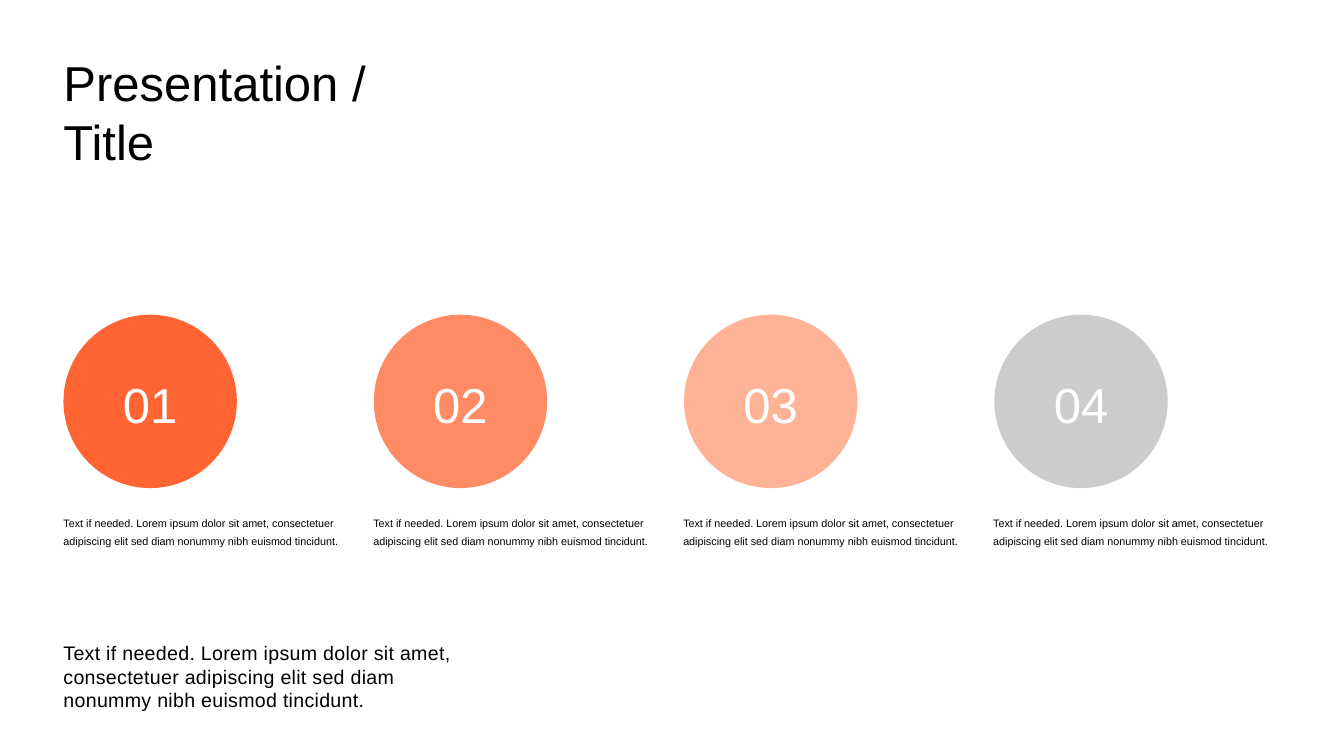
from dataclasses import dataclass

from pptx import Presentation
from pptx import util as u
from pptx.dml.color import RGBColor
from pptx.enum import shapes, text

FONT = "Arial"
BLACK, WHITE = "000000", "FFFFFF"
BODY = ("Text if needed. Lorem ipsum dolor sit amet, consectetuer "
        "adipiscing elit sed diam nonummy nibh euismod tincidunt.")


@dataclass
class TextStyle:
    size: float
    leading: float
    color: str = BLACK
    align: text.PP_ALIGN = text.PP_ALIGN.LEFT
    tracking: int = 0  # hundredths of a point


@dataclass
class Step:
    number: str
    fill: str
    caption: str = BODY


HEADING = TextStyle(35, 42)
SUMMARY = TextStyle(14, 16.8, tracking=20)
CAPTION = TextStyle(7.7, 13.2)
NUMBER = TextStyle(35, 42, WHITE, text.PP_ALIGN.CENTER)

STEPS = [
    Step("01", "FF6432"),
    Step("02", "FF8B65"),
    Step("03", "FFB396"),
    Step("04", "CCCCCC"),
]

# Column layout in centimetres
CIRCLE_LEFT, CIRCLE_TOP, CIRCLE_SIZE, CIRCLE_PITCH = 1.6, 7.93, 4.37, 7.82
TEXT_LEFT, CAPTION_TOP, CAPTION_PITCH = 1.35, 12.75, 7.81


def rgb(color: str) -> RGBColor:
    return RGBColor.from_string(color)


def write(frame, words: str, style: TextStyle) -> None:
    frame.word_wrap = True
    frame.text = words
    for paragraph in frame.paragraphs:
        paragraph.alignment = style.align
        paragraph.line_spacing = u.Pt(style.leading)
        for run in paragraph.runs:
            run.font.name = FONT
            run.font.size = u.Pt(style.size)
            run.font.color.rgb = rgb(style.color)
            if style.tracking:
                run._r.get_or_add_rPr().set("spc", str(style.tracking))


def add_text(slide, left: float, top: float, width: float, height: float,
             words: str, style: TextStyle) -> None:
    box = slide.shapes.add_textbox(u.Cm(left), u.Cm(top), u.Cm(width), u.Cm(height))
    write(box.text_frame, words, style)


def add_step(slide, column: int, step: Step) -> None:
    circle = slide.shapes.add_shape(
        shapes.MSO_SHAPE.OVAL,
        u.Cm(CIRCLE_LEFT + column * CIRCLE_PITCH), u.Cm(CIRCLE_TOP),
        u.Cm(CIRCLE_SIZE), u.Cm(CIRCLE_SIZE))
    circle.shadow.inherit = False
    circle.fill.solid()
    circle.fill.fore_color.rgb = rgb(step.fill)
    circle.line.fill.background()
    frame = circle.text_frame
    frame.vertical_anchor = text.MSO_ANCHOR.MIDDLE
    frame.margin_top, frame.margin_bottom = u.Cm(0.25), u.Cm(0.13)
    write(frame, step.number, NUMBER)

    add_text(slide, TEXT_LEFT + column * CAPTION_PITCH, CAPTION_TOP, 7.5, 1.57,
             step.caption, CAPTION)


def main() -> None:
    prs = Presentation()
    prs.slide_width, prs.slide_height = u.Cm(33.87), u.Cm(19.05)
    slide = prs.slides.add_slide(prs.slide_layouts[6])

    # Heading and closing summary
    add_text(slide, TEXT_LEFT, 1.21, 13.59, 3.5, "Presentation /\nTitle", HEADING)
    add_text(slide, TEXT_LEFT, 16.03, 10.95, 2.39, BODY, SUMMARY)

    # Numbered circles with captions
    for column, step in enumerate(STEPS):
        add_step(slide, column, step)

    prs.save("out.pptx")


if __name__ == "__main__":
    main()
